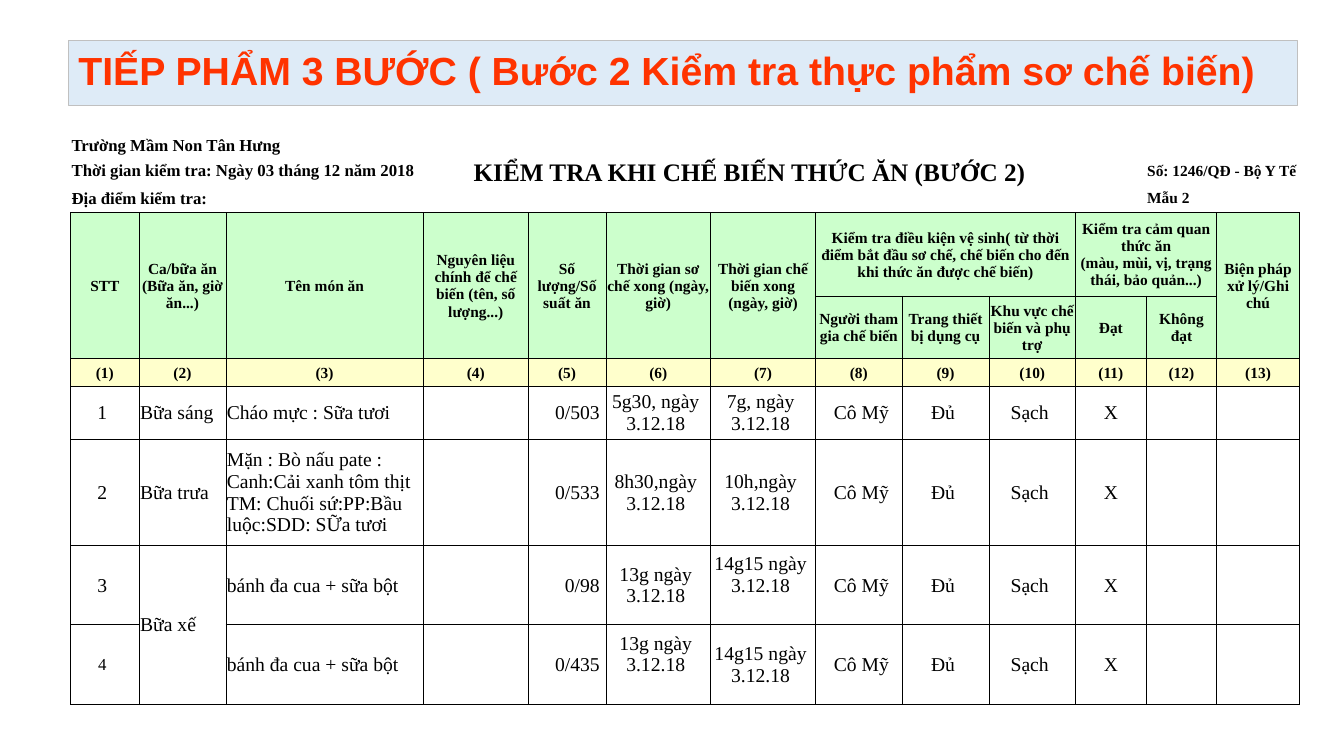
"""Build a slide with the step 2 food inspection table of a kindergarten kitchen."""
from dataclasses import dataclass

from lxml.etree import SubElement
from pptx import Presentation
from pptx.dml.color import RGBColor as Color
from pptx.enum.shapes import MSO_SHAPE as Preset
from pptx.enum.text import MSO_ANCHOR as Anchor, PP_ALIGN as Align
from pptx.oxml.ns import qn
from pptx.util import Inches, Pt


@dataclass(frozen=True)
class Theme:
    """Colours, fonts and type sizes."""
    heading_font: str = "Arial"
    table_font: str = "Times New Roman"
    heading_text: str = "FF3300"
    heading_fill: str = "DEEBF7"
    heading_line: str = "C0C0C0"
    ink: str = "000000"
    header_fill: str = "CCFFCC"
    number_fill: str = "FFFFCC"
    heading_size: int = 28
    title_size: int = 18
    body_size: int = 14
    info_size: int = 12
    header_size: int = 11
    border: float = 0.5


@dataclass(frozen=True)
class Entry:
    """One text of the table, with its grid place, span, format and extra insets."""
    row: int
    column: int
    text: str
    rows: int = 1
    columns: int = 1
    size: int = 11
    bold: bool = True
    align: Align = Align.CENTER
    left: int = 0
    right: int = 0
    bottom: int = 0


@dataclass(frozen=True)
class Meal:
    """One inspected meal."""
    shift: str
    dish: str
    portions: str
    prepared: str
    cooked: str
    number_size: int = 14
    prepared_lift: int = 0
    cooked_lift: int = 0


THEME = Theme()
COLUMNS = (68, 86, 196, 104, 77, 104, 104, 86, 86, 86, 70, 70, 82)
ROWS = (24, 26, 29, 83, 62, 27, 53, 105, 79, 79)
HEADER_ROW, NUMBER_ROW, MEAL_ROW = 3, 5, 6
INSET, SPACE, BLANK_LINE = 1, 5, 21

INFO = (
    Entry(0, 0, "Trường Mầm Non Tân Hưng", 1, 3, THEME.info_size, align=Align.LEFT),
    Entry(1, 0, "Thời gian kiểm tra: Ngày 03 tháng 12 năm 2018", 1, 3, THEME.info_size,
          align=Align.LEFT),
    Entry(2, 0, "Địa điểm kiểm tra:", 1, 3, THEME.info_size, align=Align.LEFT),
    Entry(0, 3, "KIỂM TRA KHI CHẾ BIẾN THỨC ĂN (BƯỚC 2)", 3, 7, THEME.title_size),
    Entry(1, 11, "Số: 1246/QĐ - Bộ Y Tế", 1, 2, align=Align.LEFT),
    Entry(2, 11, "Mẫu 2", 1, 2, align=Align.LEFT),
)
TALL_HEADERS = {
    0: "STT",
    1: "Ca/bữa ăn (Bữa ăn, giờ ăn...)",
    2: "Tên món ăn",
    3: "Nguyên liệu chính để chế biến (tên, số lượng...)",
    4: "Số lượng/Số suất ăn",
    5: "Thời gian sơ chế xong (ngày, giờ)",
    6: "Thời gian chế biến xong (ngày, giờ)",
    12: "Biện pháp xử lý/Ghi chú",
}
GROUP_HEADERS = (
    Entry(3, 7, "Kiểm tra điều kiện vệ sinh( từ thời điểm bắt đầu sơ chế, chế biến cho đến "
                "khi thức ăn được chế biến)", columns=3),
    Entry(3, 10, "Kiểm tra cảm quan thức ăn\n(màu, mùi, vị, trạng thái, bảo quản...)", columns=2),
)
SUB_HEADERS = ("Người tham gia chế biến", "Trang thiết bị dụng cụ",
               "Khu vực chế biến và phụ trợ", "Đạt", "Không đạt")
MEALS = (
    Meal("Bữa sáng", "Cháo mực : Sữa tươi", "0/503", "5g30, ngày 3.12.18", "7g, ngày 3.12.18"),
    Meal("Bữa trưa", "Mặn : Bò nấu pate : Canh:Cải xanh tôm thịt TM: Chuối sứ:PP:Bầu luộc:SDD: "
         "SỮa tươi", "0/533", "8h30,ngày 3.12.18", "10h,ngày 3.12.18"),
    Meal("Bữa xế", "bánh đa cua + sữa bột", "0/98", "13g ngày 3.12.18", "14g15 ngày 3.12.18",
         cooked_lift=BLANK_LINE),
    Meal("", "bánh đa cua + sữa bột", "0/435", "13g ngày 3.12.18", "14g15 ngày 3.12.18",
         number_size=THEME.info_size, prepared_lift=BLANK_LINE),
)


def grid(steps: float) -> int:
    """Turn steps of the slide grid (1333 columns by 750 rows) into a length."""
    return Inches(steps / 100)


def write(frame, text: str, *, size: int, font: str, color: str, bold: bool = True,
          align: Align = Align.LEFT, spacing: float = 1.0) -> None:
    """Put text into a frame's first paragraph, with line breaks at newlines."""
    paragraph = frame.paragraphs[0]
    paragraph.alignment = align
    paragraph.line_spacing = spacing
    for index, line in enumerate(text.split("\n")):
        if index:
            paragraph.add_line_break()
        run = paragraph.add_run()
        run.text = line
        run.font.size, run.font.name, run.font.bold = Pt(size), font, bold
        run.font.color.rgb = Color.from_string(color)


def draw_heading(slide) -> None:
    """Draw the banner across the top."""
    banner = slide.shapes.add_shape(Preset.RECTANGLE, grid(68), grid(40), grid(1219), grid(65))
    banner.shadow.inherit = False
    banner.fill.solid()
    banner.fill.fore_color.rgb = Color.from_string(THEME.heading_fill)
    banner.line.color.rgb = Color.from_string(THEME.heading_line)
    banner.line.width = Pt(0.75)
    banner.text_frame.word_wrap = True
    banner.text_frame.vertical_anchor = Anchor.MIDDLE
    write(banner.text_frame, "TIẾP PHẨM 3 BƯỚC ( Bước 2 Kiểm tra thực phẩm sơ chế biến)",
          size=THEME.heading_size, font=THEME.heading_font, color=THEME.heading_text, spacing=0.9)


def format_cell(cell, row: int) -> None:
    """Set borders, fill, insets and empty-line size by the cell's row."""
    visible = "LRTB" if row >= HEADER_ROW else "B" if row == HEADER_ROW - 1 else ""
    properties = cell._tc.get_or_add_tcPr()
    for side in "LRTB":
        line = SubElement(properties, qn(f"a:ln{side}"), w=str(Pt(THEME.border)))
        if side in visible:
            SubElement(SubElement(line, qn("a:solidFill")), qn("a:srgbClr"), val=THEME.ink)
        else:
            SubElement(line, qn("a:noFill"))
    if HEADER_ROW <= row <= NUMBER_ROW:
        cell.fill.solid()
        color = THEME.number_fill if row == NUMBER_ROW else THEME.header_fill
        cell.fill.fore_color.rgb = Color.from_string(color)
    else:
        cell.fill.background()
    cell.margin_left = cell.margin_right = cell.margin_top = grid(INSET)
    cell.margin_bottom = 0
    cell.vertical_anchor = Anchor.MIDDLE
    SubElement(cell.text_frame.paragraphs[0]._p, qn("a:endParaRPr"),
               sz=str(THEME.header_size * 100))


def header_entries() -> list[Entry]:
    """List the header and column number texts."""
    entries = [Entry(HEADER_ROW, column, text, rows=2) for column, text in TALL_HEADERS.items()]
    entries += [Entry(HEADER_ROW + 1, 7 + index, text) for index, text in enumerate(SUB_HEADERS)]
    entries += [Entry(NUMBER_ROW, column, f"({column + 1})") for column in range(len(COLUMNS))]
    return entries + list(GROUP_HEADERS)


def meal_entries(index: int, meal: Meal) -> list[Entry]:
    """List the texts of one meal row."""
    row = MEAL_ROW + index
    body = {"size": THEME.body_size, "bold": False}
    entries = [
        Entry(row, 0, str(index + 1), size=meal.number_size, bold=False, right=SPACE),
        Entry(row, 2, meal.dish, align=Align.LEFT, **body),
        Entry(row, 4, meal.portions, align=Align.RIGHT, right=SPACE, **body),
        Entry(row, 5, meal.prepared, right=SPACE, bottom=meal.prepared_lift, **body),
        Entry(row, 6, meal.cooked, right=SPACE, bottom=meal.cooked_lift, **body),
        Entry(row, 7, "Cô Mỹ", left=SPACE, **body),
        Entry(row, 8, "Đủ", right=SPACE, **body),
        Entry(row, 9, "Sạch", right=SPACE, **body),
        Entry(row, 10, "X", **body),
    ]
    if meal.shift:
        rows = 2 if meal.shift == "Bữa xế" else 1
        entries.append(Entry(row, 1, meal.shift, rows=rows, align=Align.LEFT, **body))
    return entries


def draw_table(slide) -> None:
    """Draw the inspection table."""
    frame = slide.shapes.add_table(len(ROWS), len(COLUMNS), grid(70), grid(132),
                                   grid(sum(COLUMNS)), grid(sum(ROWS)))
    table = frame.table
    table.first_row = table.horz_banding = False
    for column, width in zip(table.columns, COLUMNS):
        column.width = grid(width)
    for index, height in enumerate(ROWS):
        table.rows[index].height = grid(height)
        for cell in table.rows[index].cells:
            format_cell(cell, index)
    entries = [*INFO, *header_entries()]
    for index, meal in enumerate(MEALS):
        entries += meal_entries(index, meal)
    for entry in entries:
        cell = table.cell(entry.row, entry.column)
        if entry.rows * entry.columns > 1:
            cell.merge(table.cell(entry.row + entry.rows - 1, entry.column + entry.columns - 1))
        cell.margin_left = grid(INSET + entry.left)
        cell.margin_right = grid(INSET + entry.right)
        cell.margin_bottom = grid(entry.bottom)
        write(cell.text_frame, entry.text, size=entry.size, font=THEME.table_font,
              color=THEME.ink, bold=entry.bold, align=entry.align)


def main() -> None:
    """Build and save the presentation."""
    presentation = Presentation()
    presentation.slide_width, presentation.slide_height = grid(1333), grid(750)
    slide = presentation.slides.add_slide(presentation.slide_layouts[6])
    draw_heading(slide)
    draw_table(slide)
    presentation.save("out.pptx")


if __name__ == "__main__":
    main()
